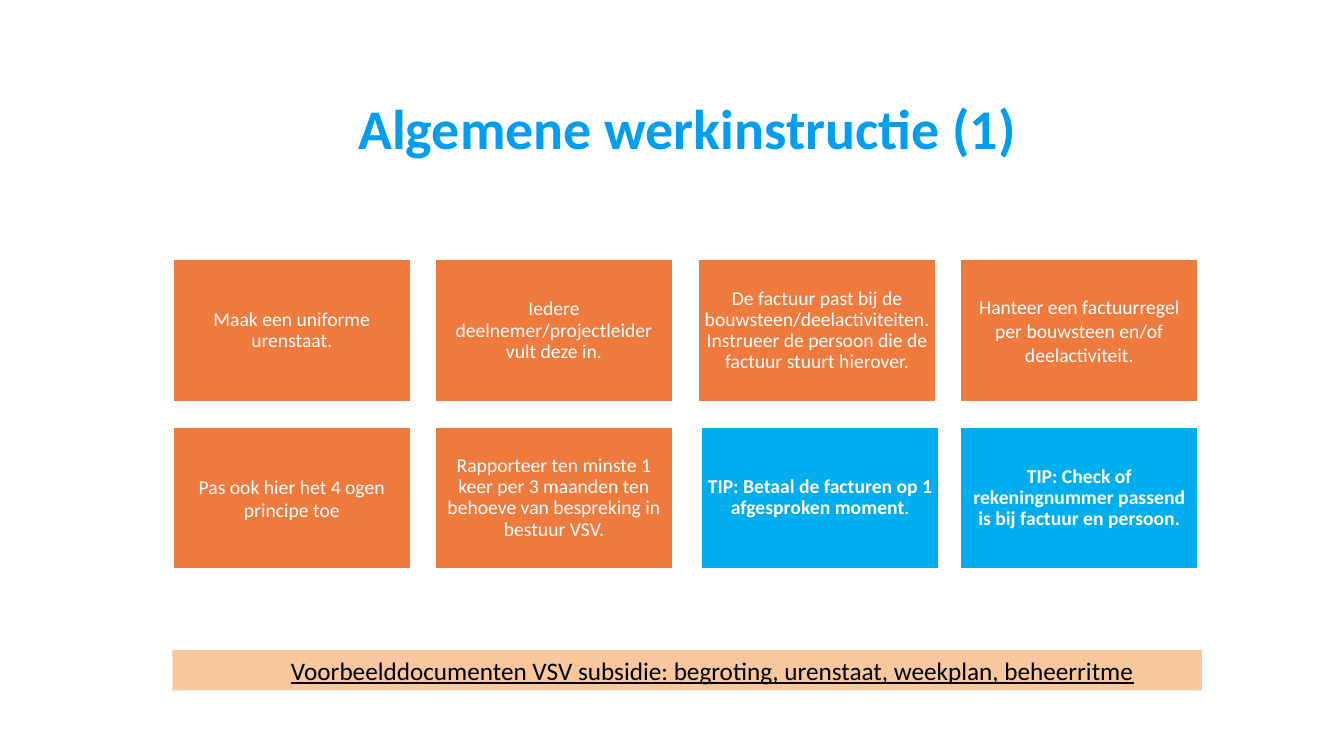
from dataclasses import dataclass

from lxml.etree import SubElement
from pptx import Presentation
from pptx.dml.color import RGBColor
from pptx.enum.shapes import MSO_SHAPE
from pptx.enum.text import MSO_ANCHOR, PP_ALIGN
from pptx.oxml.ns import qn
from pptx.util import Emu, Pt

PX = 9144  # 100 px to the inch


@dataclass(frozen=True)
class Theme:
    font: str = "Calibri"
    title: str = "009EF3"
    step: str = "EF7A3D"
    tip: str = "00ADEE"
    foot: str = "F2903F"
    white: str = "FFFFFF"
    black: str = "000000"
    big: int = 40
    mid: int = 18
    small: int = 14


THEME = Theme()


def write(frame, runs, *, size, color, bold=False, under=None,
          lines=1.0, inset=(0, 0), indent=0):
    """Fill the frame with one centred paragraph; runs are (text, bold) or a string."""
    frame.word_wrap = True
    frame.vertical_anchor = MSO_ANCHOR.MIDDLE
    frame.margin_left = frame.margin_right = Emu(inset[0] * PX)
    frame.margin_top = frame.margin_bottom = Emu(inset[1] * PX)
    para = frame.paragraphs[0]
    para.alignment = PP_ALIGN.CENTER
    para.line_spacing = lines
    if indent:
        props = para._p.get_or_add_pPr()
        props.set("marL", str(indent * PX))
        props.set("indent", "0")
    for text, heavy in [(runs, bold)] if isinstance(runs, str) else runs:
        run = para.add_run()
        run.text = text
        font = run.font
        font.name, font.size = THEME.font, Pt(size)
        font.bold, font.underline = heavy, under
        font.color.rgb = RGBColor.from_string(color)


class Deck:
    def __init__(self, theme, width, height):
        self.theme = theme
        self.file = Presentation()
        self.file.slide_width = Emu(width * PX)
        self.file.slide_height = Emu(height * PX)
        self.slide = self.file.slides.add_slide(self.file.slide_layouts[6])

    def label(self, area, text, **style):
        box = self.slide.shapes.add_textbox(*(Emu(n * PX) for n in area))
        write(box.text_frame, text, **style)

    def block(self, area, text, fill, edge=None, alpha=None, **style):
        """Add a filled rectangle with text; alpha is its opacity in percent."""
        box = self.slide.shapes.add_shape(
            MSO_SHAPE.RECTANGLE, *(Emu(n * PX) for n in area))
        box.shadow.inherit = False
        box.fill.solid()
        box.fill.fore_color.rgb = RGBColor.from_string(fill)
        if alpha is not None:
            tone = box._element.spPr.find(qn("a:solidFill"))[0]
            SubElement(tone, qn("a:alpha")).set("val", str(alpha * 1000))
        if edge:
            box.line.color.rgb = RGBColor.from_string(edge)
            box.line.width = Pt(2)
        else:
            box.line.fill.background()
        write(box.text_frame, text, **style)

    def save(self):
        self.file.save("out.pptx")


# Each card: text, line spacing, is it a tip, shift to the right in px
CARDS = [
    ("Maak een uniforme urenstaat.", 0.9, False, 0),
    ("Iedere deelnemer/projectleider vult deze in.", 0.9, False, 0),
    ("De factuur past bij de bouwsteen/deelactiviteiten. Instrueer de "
     "persoon die de factuur stuurt hierover.", 0.9, False, 0),
    ("Hanteer een factuurregel per bouwsteen en/of deelactiviteit.",
     1.0, False, 0),
    ("Pas ook hier het 4 ogen principe toe", 1.0, False, 0),
    ("Rapporteer ten minste 1 keer per 3 maanden ten behoeve van "
     "bespreking in bestuur VSV.", 0.9, False, 0),
    ([("TIP: Betaal de facturen op 1 afgesproken moment", True),
      (".", False)], 0.9, True, 3),
    ("TIP: Check of rekeningnummer passend is bij factuur en persoon.",
     0.9, True, 0),
]


def main():
    deck = Deck(THEME, 1333, 750)
    left, wide = 171, 1021
    deck.label((left, 105, wide, 43), "Algemene werkinstructie (1)",
               size=THEME.big, color=THEME.title, bold=True)
    for i, (text, lines, tip, shift) in enumerate(CARDS):
        row, col = divmod(i, 4)
        area = (left + round(col * 260.4) + shift, 257 + row * 166, 237, 142)
        deck.block(area, text, THEME.tip if tip else THEME.step,
                   edge=THEME.white, size=THEME.small, color=THEME.white,
                   bold=tip, lines=lines, inset=(6, 6))
    deck.block((left, 645, wide, 40),
               "Voorbeelddocumenten VSV subsidie: begroting, urenstaat, "
               "weekplan, beheerritme", THEME.foot, alpha=50,
               size=THEME.mid, color=THEME.black, under=True,
               inset=(10, 5), indent=50)
    deck.save()


if __name__ == "__main__":
    main()
